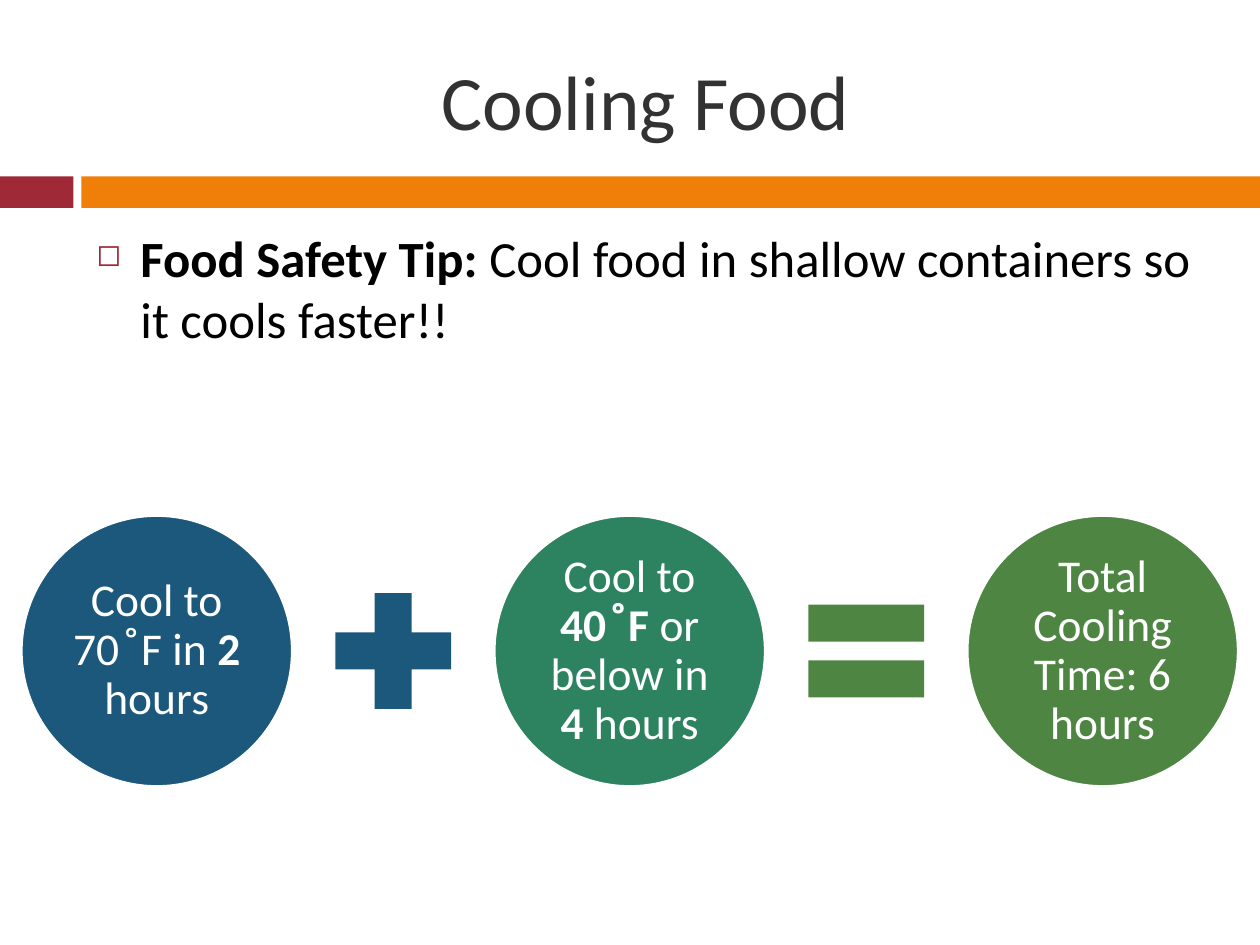
"""Build the Cooling Food slide with its cooling-time equation."""
from lxml.etree import SubElement
from pptx import Presentation
from pptx.dml.color import RGBColor
from pptx.enum.shapes import MSO_SHAPE
from pptx.enum.text import MSO_ANCHOR, MSO_AUTO_SIZE, PP_ALIGN
from pptx.oxml.ns import qn
from pptx.util import Pt

COLORS = {
    "red": "9F2936",
    "orange": "F07F09",
    "title": "323232",
    "black": "000000",
    "white": "FFFFFF",
    "blue": "1B587C",
    "teal": "2D8260",
    "green": "4E8542",
}
FONT = "Calibri"
CIRCLE_SIZE = 154.8
OPERATOR_SIZE = 90
EQUATION_LEFT = 12.2
EQUATION_MIDDLE = 372
STEP = 270.25


def color(name):
    return RGBColor.from_string(COLORS[name])


def add_runs(paragraph, parts, size, color_name):
    for text, bold in parts:
        run = paragraph.add_run()
        run.text = text
        run.font.name = FONT
        run.font.size = Pt(size)
        run.font.bold = bold
        run.font.color.rgb = color(color_name)


def add_filled_shape(slide, kind, box, fill):
    shape = slide.shapes.add_shape(kind, *map(Pt, box))
    shape.shadow.inherit = False
    shape.fill.solid()
    shape.fill.fore_color.rgb = color(fill)
    shape.line.fill.background()
    return shape


def add_title(slide, text):
    title = slide.shapes.title
    title.left, title.top, title.width, title.height = map(Pt, (48, 18, 642, 78))
    frame = title.text_frame
    frame.auto_size = MSO_AUTO_SIZE.NONE
    frame.vertical_anchor = MSO_ANCHOR.MIDDLE
    paragraph = frame.paragraphs[0]
    paragraph.alignment = PP_ALIGN.CENTER
    add_runs(paragraph, [(text, False)], 44, "title")


def add_bullet(paragraph, character, color_name, percent):
    properties = paragraph._p.get_or_add_pPr()
    properties.set("marL", str(Pt(25.2)))
    properties.set("indent", str(-Pt(25.2)))
    bullet_color = SubElement(properties, qn("a:buClr"))
    SubElement(bullet_color, qn("a:srgbClr"), val=COLORS[color_name])
    SubElement(properties, qn("a:buSzPct"), val=str(percent * 1000))
    SubElement(properties, qn("a:buChar"), char=character)


def add_tip(slide, parts):
    frame = slide.shapes.add_textbox(*map(Pt, (48, 126, 642, 354))).text_frame
    frame.word_wrap = True
    paragraph = frame.paragraphs[0]
    paragraph.space_before = Pt(7)
    add_bullet(paragraph, "◻", "red", 60)
    add_runs(paragraph, parts, 29, "black")


def add_circle(slide, index, fill, parts):
    box = (EQUATION_LEFT + index * STEP, EQUATION_MIDDLE - CIRCLE_SIZE / 2, CIRCLE_SIZE, CIRCLE_SIZE)
    circle = add_filled_shape(slide, MSO_SHAPE.OVAL, box, fill)
    circle.line.color.rgb = color("white")
    circle.line.width = Pt(1.5)
    frame = circle.text_frame
    frame.word_wrap = True
    frame.vertical_anchor = MSO_ANCHOR.MIDDLE
    frame.margin_left = frame.margin_right = frame.margin_top = frame.margin_bottom = Pt(2.6)
    paragraph = frame.paragraphs[0]
    paragraph.alignment = PP_ALIGN.CENTER
    paragraph.line_spacing = 0.9
    add_runs(paragraph, parts, 26, "white")


def add_operator(slide, index, kind, fill):
    center = EQUATION_LEFT + CIRCLE_SIZE / 2 + (index + 0.5) * STEP
    box = (center - OPERATOR_SIZE / 2, EQUATION_MIDDLE - OPERATOR_SIZE / 2, OPERATOR_SIZE, OPERATOR_SIZE)
    add_filled_shape(slide, kind, box, fill)


def main():
    presentation = Presentation()
    presentation.slide_width, presentation.slide_height = Pt(720), Pt(540)
    slide = presentation.slides.add_slide(presentation.slide_layouts[5])

    add_filled_shape(slide, MSO_SHAPE.RECTANGLE, (0, 100.8, 42, 18), "red")
    add_filled_shape(slide, MSO_SHAPE.RECTANGLE, (46.5, 100.8, 673.5, 18), "orange")
    add_title(slide, "Cooling Food")
    add_tip(slide, [
        ("Food Safety Tip:", True),
        (" Cool food in shallow containers so it cools faster!!", False),
    ])

    circles = [
        ("blue", [("Cool to 70 ̊ F in ", False), ("2", True), (" hours", False)]),
        ("teal", [
            ("Cool to ", False), ("40 ̊ F ", True), ("or below in ", False),
            ("4", True), (" hours", False),
        ]),
        ("green", [("Total Cooling Time: 6 hours", False)]),
    ]
    for index, (fill, parts) in enumerate(circles):
        add_circle(slide, index, fill, parts)
    operators = [(MSO_SHAPE.MATH_PLUS, "blue"), (MSO_SHAPE.MATH_EQUAL, "green")]
    for index, (kind, fill) in enumerate(operators):
        add_operator(slide, index, kind, fill)

    presentation.save("out.pptx")


if __name__ == "__main__":
    main()
